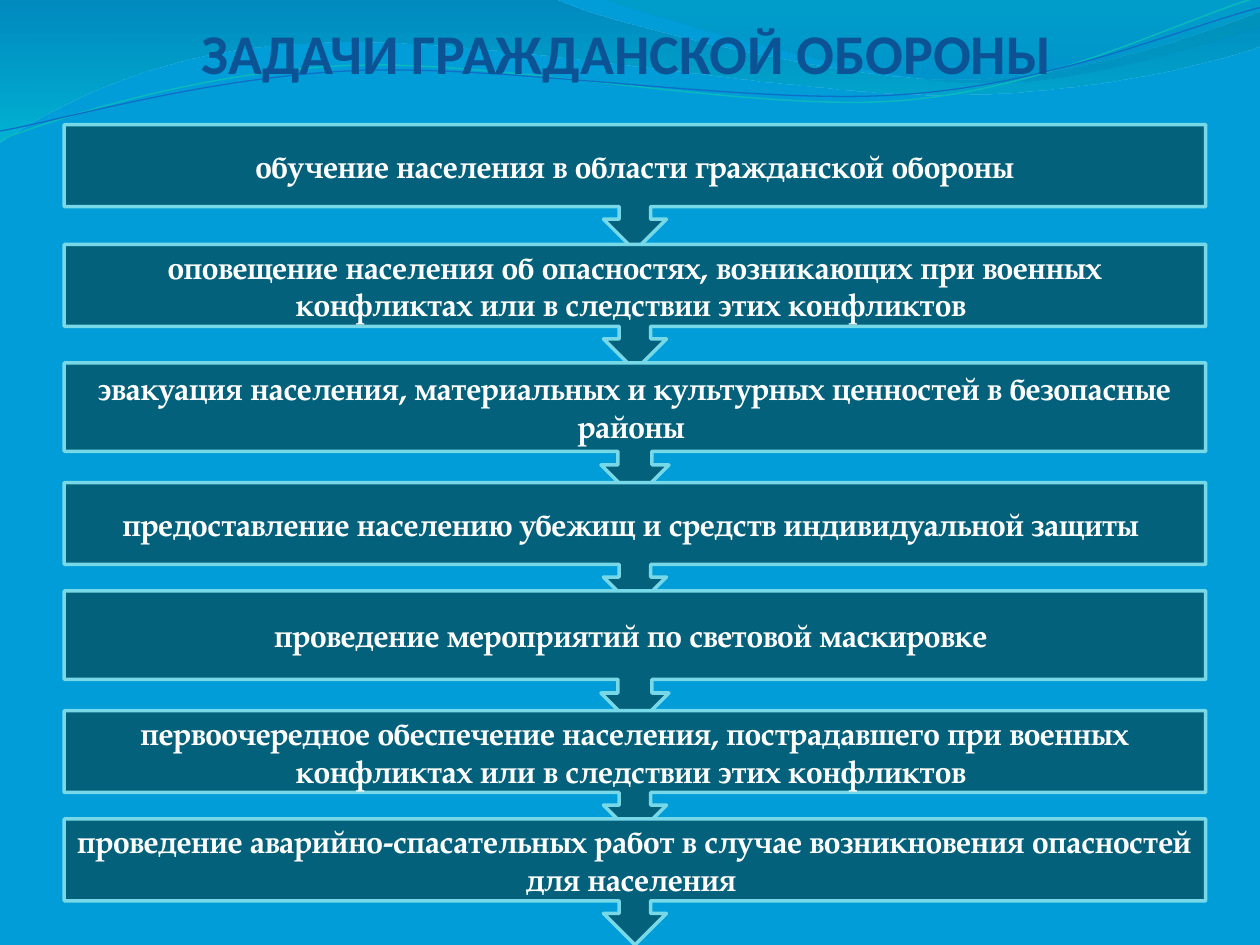
"""Builds the slide on the tasks of civil defence as a chain of callouts."""
import math
from dataclasses import dataclass
from typing import Optional

import pptx
import pptx.dml.color
import pptx.enum.shapes
import pptx.enum.text
import pptx.oxml
import pptx.oxml.ns
import pptx.util
from pptx.util import Inches

Point = tuple[float, float]


@dataclass(frozen=True)
class Theme:
    background: str = "009DD9"
    callout: str = "04617B"
    callout_edge: str = "77D9E8"
    callout_text: str = "FFFFFF"
    title: str = "0B5394"
    title_font: str = "Calibri"
    body_font: str = "TeX Gyre Pagella"
    title_size: float = 32
    body_size: float = 18
    edge_width: float = 2


@dataclass(frozen=True)
class Stop:
    position: float
    color: str
    opacity: int


@dataclass(frozen=True)
class Wave:
    box: tuple[float, float, float, float]
    start: Point
    segments: list[list[Point]]
    stops: tuple[Stop, ...] = ()
    color: Optional[str] = None
    width: float = 0
    rotation: float = 0


@dataclass(frozen=True)
class Task:
    text: str
    top: float
    height: float = 1.0


THEME = Theme()

WAVES = [
    Wave(
        (-0.01, -0.01, 10.02, 1.14),
        (0, 0),
        [
            [(4.4, -0.01)],
            [(4.76, 0.17), (6.64, 0.63), (7.58, 0.63)],
            [(8.53, 0.63), (9.58, 0.26), (10, 0.09)],
            [(10.01, 0.36)],
            [(9.83, 0.44), (8.7, 0.76), (7.46, 0.75)],
            [(6.22, 0.75), (3.82, 0.28), (2.57, 0.34)],
            [(1.29, 0.36), (0.46, 0.83), (-0.01, 1.13)],
        ],
        stops=(Stop(0, "0074A1", 45), Stop(1, "00C6CF", 55)),
    ),
    Wave(
        (4.79, -0.01, 5.21, 0.7),
        (4.79, -0.01),
        [
            [(5.09, 0.11), (6.82, 0.62), (7.69, 0.65)],
            [(8.56, 0.69), (9.61, 0.32), (10, 0.21)],
            [(10, 0)],
        ],
        stops=(Stop(0, "00A1A9", 30), Stop(0.8, "008BBF", 45)),
    ),
    Wave(
        (-0.02, 0.22, 10.02, 0.71),
        (0, 1.11),
        [
            [(0.48, 0.93), (1.58, 0.57), (2.77, 0.52)],
            [(3.95, 0.47), (5.93, 0.89), (7.13, 0.8)],
            [(8.33, 0.71), (9.38, 0.15), (9.98, -0.02)],
        ],
        color="0AB8BF", width=0.85, rotation=357.3,
    ),
    Wave(
        (-0.02, 0.3, 10.03, 0.58),
        (0, 1.04),
        [
            [(0.47, 0.96), (1.64, 0.61), (2.83, 0.56)],
            [(4.03, 0.51), (5.97, 0.84), (7.17, 0.75)],
            [(8.36, 0.67), (9.41, 0.21), (10, 0.06)],
        ],
        color="0F6FC6", width=0.75, rotation=357.3,
    ),
]

TASKS = [
    Task("обучение населения в области гражданской обороны", 0.99),
    Task("оповещение населения об опасностях, возникающих при военных конфликтах "
         "или в следствии этих конфликтов ", 1.94),
    Task("эвакуация населения, материальных и культурных ценностей в безопасные районы ", 2.88, 1.08),
    Task("предоставление населению убежищ и средств индивидуальной защиты ", 3.83),
    Task("проведение мероприятий по световой маскировке ", 4.69, 1.08),
    Task("первоочередное обеспечение населения, пострадавшего при военных конфликтах "
         "или в следствии этих конфликтов ", 5.64),
    Task("проведение аварийно-спасательных работ в случае возникновения опасностей "
         "для населения ", 6.5),
]


def rgb(color: str) -> pptx.dml.color.RGBColor:
    """Return the colour object for a hex string."""
    return pptx.dml.color.RGBColor.from_string(color)


def write(frame, text: str, *, font: str, size: float, color: str, anchor) -> None:
    """Put one bold centred paragraph into a text frame."""
    frame.word_wrap = True
    frame.vertical_anchor = anchor
    paragraph = frame.paragraphs[0]
    paragraph.alignment = pptx.enum.text.PP_ALIGN.CENTER
    run = paragraph.add_run()
    run.text = text
    run.font.name = font
    run.font.size = pptx.util.Pt(size)
    run.font.bold = True
    run.font.color.rgb = rgb(color)


def local_point(wave: Wave, point: Point) -> str:
    """Give a slide point as XML within the unrotated box of a wave."""
    left, top, width, height = wave.box
    dx, dy = point[0] - left - width / 2, point[1] - top - height / 2
    turn = math.radians(-wave.rotation)
    x = width / 2 + dx * math.cos(turn) - dy * math.sin(turn)
    y = height / 2 + dx * math.sin(turn) + dy * math.cos(turn)
    return f'<a:pt x="{Inches(x)}" y="{Inches(y)}"/>'


def trace_curves(shape, wave: Wave) -> None:
    """Give a freeform the straight and cubic segments of a wave."""
    outline = next(shape._element.spPr.iter(pptx.oxml.ns.qn("a:path")))
    for command in list(outline):
        outline.remove(command)
    commands = [("moveTo", [wave.start])]
    commands += [("lnTo" if len(s) == 1 else "cubicBezTo", s) for s in wave.segments]
    if wave.stops:
        commands.append(("close", []))
    for tag, points in commands:
        body = "".join(local_point(wave, point) for point in points)
        outline.append(pptx.oxml.parse_xml(
            f'<a:{tag} {pptx.oxml.ns.nsdecls("a")}>{body}</a:{tag}>'))


def fill_gradient(shape, stops: tuple[Stop, ...]) -> None:
    """Fill a shape with a translucent gradient running downwards."""
    shape.fill.gradient()
    shape.fill.gradient_angle = 270
    for target, stop in zip(shape.fill.gradient_stops, stops):
        target.position = stop.position
        target.color.rgb = rgb(stop.color)
    colors = list(shape._element.spPr.iter(pptx.oxml.ns.qn("a:srgbClr")))
    for element, stop in zip(colors, stops):
        element.append(pptx.oxml.parse_xml(
            f'<a:alpha {pptx.oxml.ns.nsdecls("a")} val="{stop.opacity * 1000}"/>'))


def draw_wave(slide, wave: Wave) -> None:
    """Draw a filled band or a thin wavy line."""
    left, top, width, height = map(Inches, wave.box)
    builder = slide.shapes.build_freeform(left, top, scale=1.0)
    builder.add_line_segments([(left + width, top + height)], close=False)
    shape = builder.convert_to_shape()
    trace_curves(shape, wave)
    shape.rotation = wave.rotation
    shape.shadow.inherit = False
    if wave.stops:
        fill_gradient(shape, wave.stops)
        shape.line.fill.background()
    else:
        shape.fill.background()
        shape.line.color.rgb = rgb(wave.color)
        shape.line.width = pptx.util.Pt(wave.width)


def draw_task(slide, task: Task) -> None:
    """Draw one task as a callout that points down."""
    callout = slide.shapes.add_shape(
        pptx.enum.shapes.MSO_SHAPE.DOWN_ARROW_CALLOUT,
        Inches(0.51), Inches(task.top), Inches(9.06), Inches(task.height))
    callout.shadow.inherit = False
    callout.fill.solid()
    callout.fill.fore_color.rgb = rgb(THEME.callout)
    callout.line.color.rgb = rgb(THEME.callout_edge)
    callout.line.width = pptx.util.Pt(THEME.edge_width)
    write(callout.text_frame, task.text, font=THEME.body_font, size=THEME.body_size,
          color=THEME.callout_text, anchor=pptx.enum.text.MSO_ANCHOR.MIDDLE)


def draw_title(slide, text: str) -> None:
    """Place the title in front of the waves."""
    title = slide.shapes.title
    title.left, title.top, title.width, title.height = map(Inches, (0.2, 0, 9.55, 0.68))
    frame = title.text_frame
    frame.auto_size = pptx.enum.text.MSO_AUTO_SIZE.NONE
    frame.margin_left = frame.margin_right = frame.margin_bottom = 0
    frame.margin_top = Inches(0.05)
    write(frame, text, font=THEME.title_font, size=THEME.title_size,
          color=THEME.title, anchor=pptx.enum.text.MSO_ANCHOR.BOTTOM)
    slide.shapes._spTree.append(title._element)


def main() -> None:
    """Build and save the presentation."""
    deck = pptx.Presentation()
    deck.slide_width, deck.slide_height = Inches(10), Inches(7.5)
    slide = deck.slides.add_slide(deck.slide_layouts[5])
    slide.background.fill.solid()
    slide.background.fill.fore_color.rgb = rgb(THEME.background)
    for wave in WAVES:
        draw_wave(slide, wave)
    for task in TASKS:
        draw_task(slide, task)
    draw_title(slide, "ЗАДАЧИ ГРАЖДАНСКОЙ ОБОРОНЫ")
    deck.save("out.pptx")


if __name__ == "__main__":
    main()
